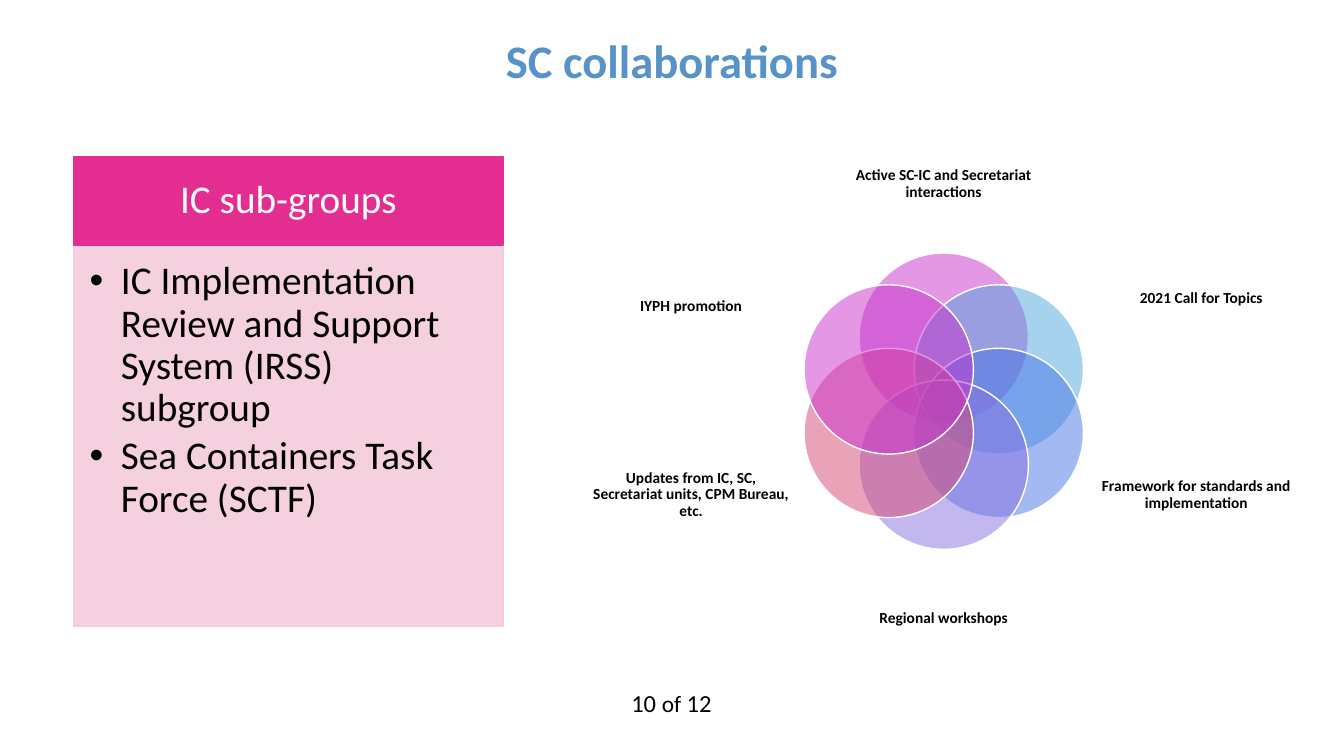
import math

from lxml import etree
from pptx import Presentation
from pptx.dml.color import RGBColor
from pptx.enum import shapes, text
from pptx.oxml import ns
from pptx.util import Inches, Pt

BLACK = RGBColor(0x00, 0x00, 0x00)
WHITE = RGBColor(0xFF, 0xFF, 0xFF)
TITLE_BLUE = RGBColor(0x57, 0x92, 0xC9)
PINK = RGBColor(0xE3, 0x2D, 0x91)
PALE_PINK = RGBColor(0xF4, 0xCD, 0xDC)
MAGENTA = RGBColor(0xC8, 0x30, 0xCC)
SKY = RGBColor(0x4E, 0xA6, 0xDC)
BLUE = RGBColor(0x47, 0x75, 0xE7)
VIOLET = RGBColor(0x89, 0x71, 0xE1)
ROSE = RGBColor(0xD5, 0x47, 0x73)


def write(paragraph, words, size, color=BLACK, bold=False,
          align=text.PP_ALIGN.CENTER, spacing=0.9):
    paragraph.alignment = align
    paragraph.line_spacing = spacing
    run = paragraph.add_run()
    run.text = words
    run.font.name = "Calibri"
    run.font.size = Pt(size)
    run.font.bold = bold
    run.font.color.rgb = color


def paint(shape, color, line_color, opacity=100):
    shape.fill.solid()
    shape.fill.fore_color.rgb = color
    shape.line.color.rgb = line_color
    shape.line.width = Pt(1)
    shape.shadow.inherit = False
    if opacity < 100:
        fill_color = shape.fill._xPr.find(ns.qn("a:solidFill"))[0]
        etree.SubElement(fill_color, ns.qn("a:alpha"), val=str(opacity * 1000))


presentation = Presentation()
presentation.slide_width = Inches(13.33)
presentation.slide_height = Inches(7.5)
slide = presentation.slides.add_slide(presentation.slide_layouts[1])

# Title
title = slide.shapes.title
title.left, title.top = Inches(0), Inches(0)
title.width, title.height = Inches(13.33), Inches(1.25)
title.text_frame.vertical_anchor = text.MSO_ANCHOR.MIDDLE
title.text_frame.auto_size = text.MSO_AUTO_SIZE.NONE
write(title.text_frame.paragraphs[0], "SC collaborations", 33.3, TITLE_BLUE, bold=True)

# Ring of overlapping circles, clockwise from the top, with a label each
center_x, center_y, ring_radius, diameter = 9.36, 3.98, 0.63, 1.68
topics = [
    ("Active SC-IC and Secretariat interactions", MAGENTA, 8.31, 1.25, 2.1, 1.15),
    ("2021 Call for Topics", SKY, 10.92, 2.34, 1.99, 1.25),
    ("Framework for standards and implementation", BLUE, 10.87, 4.21, 1.99, 1.4),
    ("Regional workshops", VIOLET, 8.31, 5.56, 2.1, 1.15),
    ("Updates from IC, SC, Secretariat units, CPM Bureau, etc.", ROSE, 5.86, 4.21, 1.99, 1.4),
    ("IYPH promotion", MAGENTA, 5.86, 2.34, 1.99, 1.4),
]
for position, (topic, color, left, top, width, height) in enumerate(topics):
    angle = math.tau * position / len(topics)
    circle = slide.shapes.add_shape(
        shapes.MSO_SHAPE.OVAL,
        Inches(center_x + ring_radius * math.sin(angle) - diameter / 2),
        Inches(center_y - ring_radius * math.cos(angle) - diameter / 2),
        Inches(diameter), Inches(diameter))
    paint(circle, color, WHITE, opacity=50)

    label = slide.shapes.add_textbox(
        Inches(left), Inches(top), Inches(width), Inches(height)).text_frame
    label.word_wrap = True
    label.vertical_anchor = text.MSO_ANCHOR.MIDDLE
    label.margin_left = label.margin_right = label.margin_top = label.margin_bottom = 0
    write(label.paragraphs[0], topic, 11, bold=True)

# Page count
page_count = slide.shapes.add_textbox(
    Inches(5.99), Inches(6.75), Inches(1.34), Inches(0.46)).text_frame
page_count.word_wrap = False
page_count.auto_size = text.MSO_AUTO_SIZE.SHAPE_TO_FIT_TEXT
page_count.margin_left = page_count.margin_right = Inches(0.17)
page_count.margin_top = page_count.margin_bottom = Inches(0.08)
for words, size in [("10 ", 17.5), ("of", 16.7), (" 12", 17.5)]:
    write(page_count.paragraphs[0], words, size, spacing=1.0)

# Sub-groups heading
heading = slide.shapes.add_shape(
    shapes.MSO_SHAPE.RECTANGLE, Inches(0.73), Inches(1.55), Inches(4.26), Inches(0.88))
paint(heading, PINK, PINK)
heading.text_frame.vertical_anchor = text.MSO_ANCHOR.MIDDLE
write(heading.text_frame.paragraphs[0], "IC sub-groups", 28, WHITE)

# Sub-groups list
subgroups = slide.placeholders[1]
subgroups.left, subgroups.top = Inches(0.73), Inches(2.43)
subgroups.width, subgroups.height = Inches(4.26), Inches(3.78)
paint(subgroups, PALE_PINK, PALE_PINK, opacity=90)
subgroup_list = subgroups.text_frame
subgroup_list.auto_size = text.MSO_AUTO_SIZE.NONE
subgroup_list.vertical_anchor = text.MSO_ANCHOR.TOP
subgroup_list.margin_left = subgroup_list.margin_top = Inches(0.16)
subgroup_list.margin_right, subgroup_list.margin_bottom = Inches(0.22), Inches(0.24)
names = ["IC Implementation Review and Support System (IRSS) subgroup",
         "Sea Containers Task Force (SCTF)"]
for position, name in enumerate(names):
    item = subgroup_list.add_paragraph() if position else subgroup_list.paragraphs[0]
    item.level = 1
    item.space_before, item.space_after = Pt(0), Pt(4)
    properties = item._p.get_or_add_pPr()
    properties.set("marL", str(Inches(0.31)))
    properties.set("indent", str(Inches(-0.31)))
    etree.SubElement(properties, ns.qn("a:buFont"), typeface="Arial")
    etree.SubElement(properties, ns.qn("a:buChar"), char="•")
    write(item, name, 28, align=text.PP_ALIGN.LEFT)

presentation.save("out.pptx")
